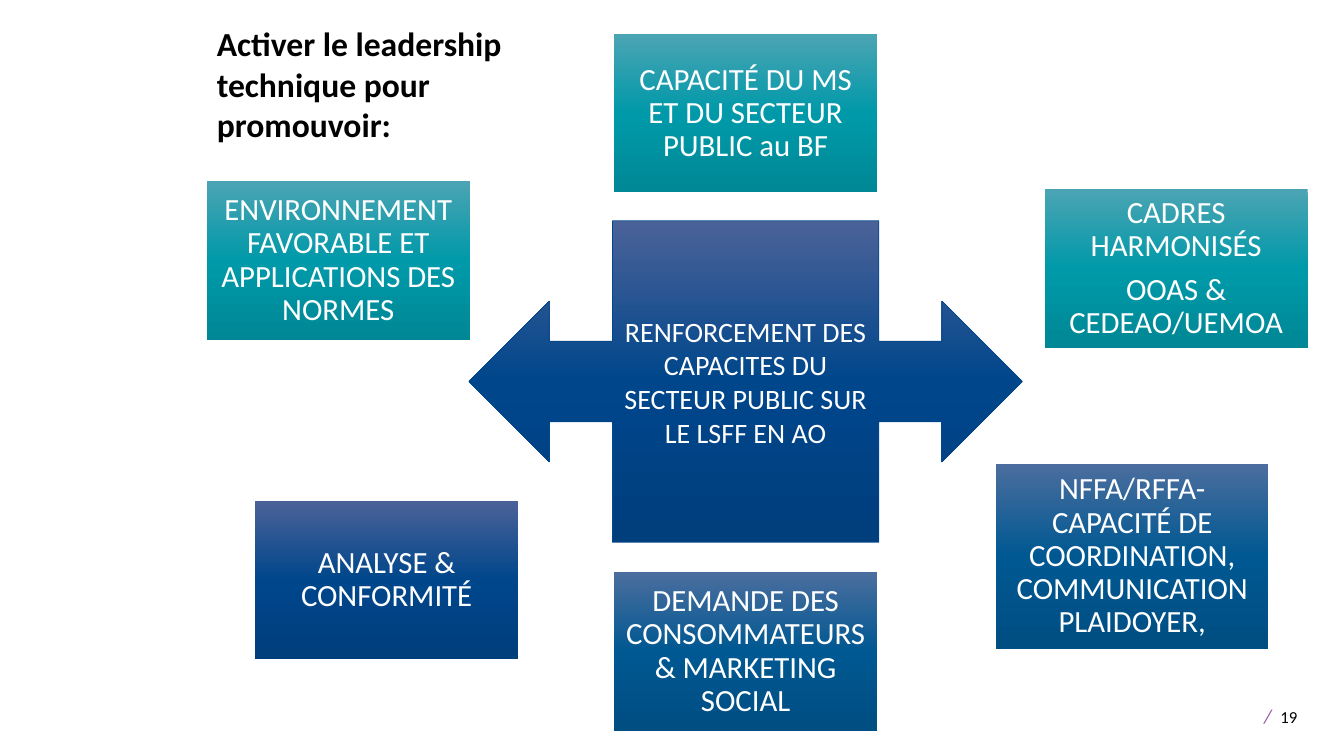
import copy

import pptx
import pptx.dml.color
import pptx.enum.shapes
import pptx.enum.text
import pptx.oxml.ns
import pptx.util
from pptx.util import Inches

SHAPE = pptx.enum.shapes.MSO_SHAPE
ANCHOR = pptx.enum.text.MSO_ANCHOR
ALIGN = pptx.enum.text.PP_ALIGN

TEAL = ("4BA4B3", "0099A9", "008896")
BLUE = ("4B6E9E", "005892", "004E82")
NAVY = ("4B6298", "00468B", "003E7C")


def rgb(value):
    return pptx.dml.color.RGBColor.from_string(value)


class Deck:
    font = "Calibri"

    def __init__(self, prs):
        self.slide = prs.slides.add_slide(prs.slide_layouts[5])

    def place(self, sp, box):
        sp.left, sp.top, sp.width, sp.height = map(Inches, box)

    def set_text(self, sp, lines, size, color, align=ALIGN.LEFT,
                 anchor=ANCHOR.TOP, bold=False, italic=False, spacing=1.0, after=0):
        tf = sp.text_frame
        tf.word_wrap = True
        tf.auto_size = pptx.enum.text.MSO_AUTO_SIZE.NONE
        tf.vertical_anchor = anchor
        tf.text = "\n".join(lines)
        for p in tf.paragraphs:
            p.alignment = align
            p.line_spacing = spacing
            p.space_before = pptx.util.Pt(0)
            p.space_after = pptx.util.Pt(after)
            p.font.name = self.font
            p.font.size = pptx.util.Pt(size)
            p.font.bold = bold
            p.font.italic = italic
            p.font.color.rgb = rgb(color)

    def title(self, text, box):
        sp = self.slide.shapes.title
        self.place(sp, box)
        self.set_text(sp, [text], 24, "000000", bold=True)

    def text(self, text, box, size, color, **style):
        sp = self.slide.shapes.add_textbox(*map(Inches, box))
        self.set_text(sp, [text], size, color, **style)

    def shape(self, kind, box, colors):
        sp = self.slide.shapes.add_shape(kind, *map(Inches, box))
        sp.shadow.inherit = False
        sp.fill.gradient()
        sp.fill.gradient_angle = 270
        first = sp._element.spPr.find(".//" + pptx.oxml.ns.qn("a:gs"))
        first.addnext(copy.deepcopy(first))
        for i, (stop, color) in enumerate(zip(sp.fill.gradient_stops, colors)):
            stop.position = i / 2
            stop.color.rgb = rgb(color)
        return sp

    def card(self, lines, left, top, colors, width=2.61, height=1.57):
        sp = self.shape(SHAPE.RECTANGLE, (left, top, width, height), colors)
        sp.line.fill.background()
        tf = sp.text_frame
        tf.margin_left = tf.margin_right = Inches(0.09)
        tf.margin_top = tf.margin_bottom = Inches(0.09)
        self.set_text(sp, lines, 22, "FFFFFF", ALIGN.CENTER, ANCHOR.MIDDLE,
                      spacing=0.9, after=7.7)

    def callout(self, text, box, colors):
        sp = self.shape(SHAPE.LEFT_RIGHT_ARROW_CALLOUT, box, colors)
        sp.line.color.rgb = rgb(colors[1])
        sp.line.width = pptx.util.Pt(0.5)
        self.set_text(sp, [text], 20, "FFFFFF", ALIGN.CENTER, ANCHOR.MIDDLE)


def main():
    prs = pptx.Presentation()
    prs.slide_width = Inches(13.33)
    prs.slide_height = Inches(7.5)
    deck = Deck(prs)

    deck.title("Activer le leadership technique pour promouvoir:", (2.05, 0.18, 3.32, 1.32))
    deck.text("/", (12.44, 6.93, 0.3, 0.34), 14, "9053A1", italic=True)
    deck.text("19", (12.6, 6.91, 0.73, 0.4), 12, "000000", anchor=ANCHOR.MIDDLE, after=6)

    deck.card(["CAPACITÉ DU MS ET DU SECTEUR PUBLIC au BF"], 6.09, 0.34, TEAL)
    deck.card(["CADRES HARMONISÉS", "OOAS & CEDEAO/UEMOA"], 10.36, 1.88, TEAL)
    deck.card(["ENVIRONNEMENT FAVORABLE ET APPLICATIONS DES NORMES"], 2.05, 1.8, TEAL)
    deck.card(["NFFA/RFFA- CAPACITÉ DE COORDINATION, COMMUNICATION PLAIDOYER,"],
              9.88, 4.6, BLUE, 2.7, 1.84)
    deck.card(["ANALYSE & CONFORMITÉ"], 2.53, 4.97, NAVY)
    deck.callout("RENFORCEMENT DES CAPACITES DU SECTEUR PUBLIC SUR LE LSFF EN AO",
                 (4.65, 2.19, 5.49, 3.19), NAVY)
    deck.card(["DEMANDE DES CONSOMMATEURS & MARKETING SOCIAL"], 6.09, 5.68, BLUE)

    prs.save("out.pptx")


if __name__ == "__main__":
    main()
